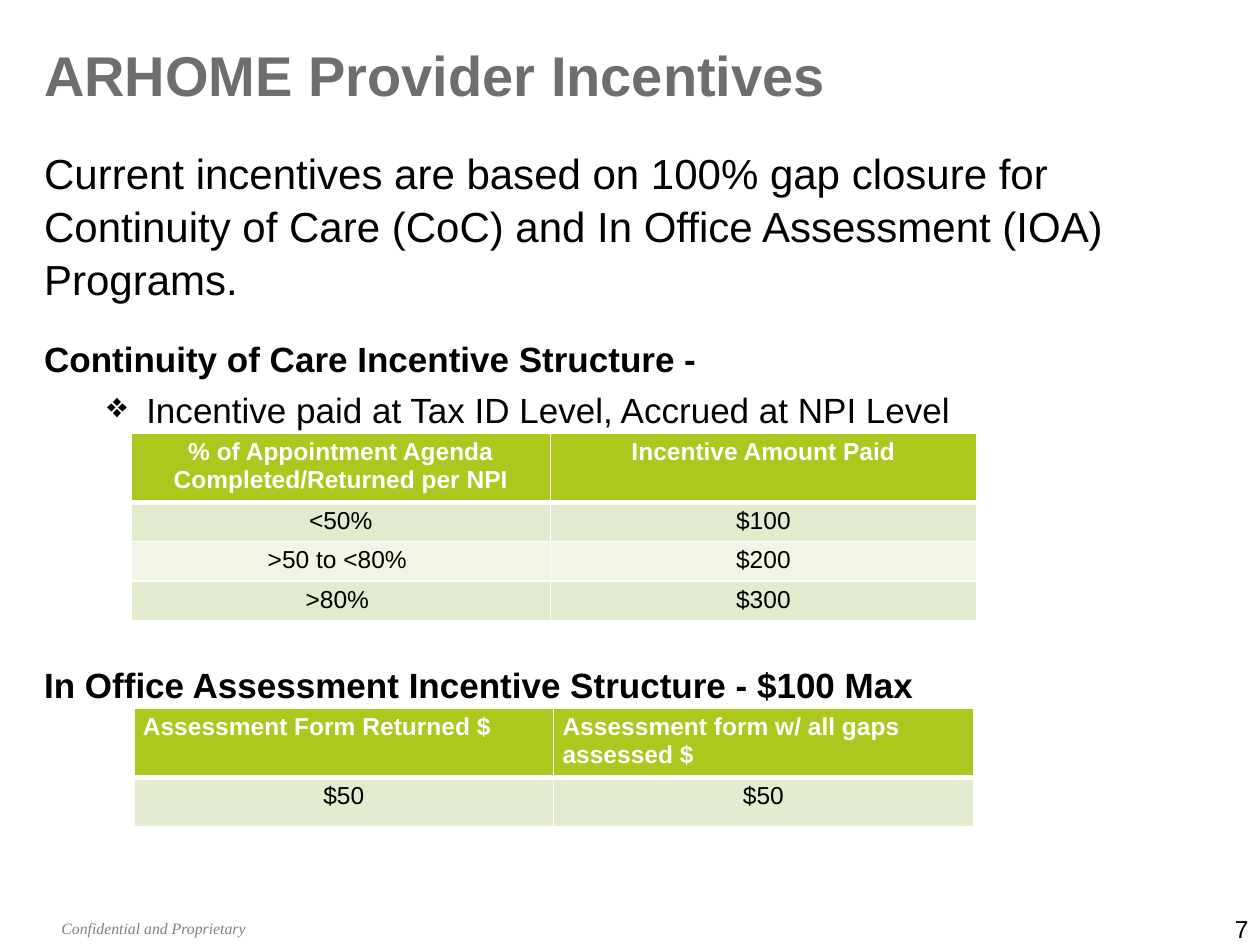
import pptx
import pptx.util
import pptx.dml.color
import pptx.enum.text
import pptx.oxml
import pptx.oxml.ns

Cm, Pt = pptx.util.Cm, pptx.util.Pt
ALIGN = pptx.enum.text.PP_ALIGN
ANCHOR = pptx.enum.text.MSO_ANCHOR

# Content
TITLE = "ARHOME Provider Incentives"
# text, size, bold, space before, bullet
BODY = [
    ("Current incentives are based on 100% gap closure for Continuity of Care "
     "(CoC) and In Office Assessment (IOA) Programs.", 24, False, 0, None),
    ("Continuity of Care Incentive Structure -", 20, True, 18, None),
    ("Incentive paid at Tax ID Level, Accrued at NPI Level", 20, False, 4, "❖"),
    ("In Office Assessment Incentive Structure - $100 Max", 20, True, 132, None),
]
CARE = {
    "at": (2.64, 8.74), "cols": (8.46, 8.58), "rows": (1.35, 0.76, 0.76, 0.76),
    "head": ALIGN.CENTER,
    "cells": [
        ("% of Appointment Agenda Completed/Returned per NPI",
         "Incentive Amount Paid"),
        ("<50%", "$100"),
        (">50 to <80% ", "$200"),
        (">80% ", "$300"),
    ],
}
OFFICE = {
    "at": (2.7, 14.28), "cols": (8.46, 8.46), "rows": (1.35, 0.99),
    "head": ALIGN.LEFT,
    "cells": [
        ("Assessment Form Returned $", "Assessment form w/ all gaps assessed $"),
        ("$50", "$50"),
    ],
}
FOOTER, PAGE = "Confidential and Proprietary", "7"

COLOR = {"title": "6E6E6E", "text": "000000", "foot": "808080",
         "white": "FFFFFF", "head": "AAC81E", "odd": "E2EBCD", "even": "F1F5E8"}

deck = pptx.Presentation()
deck.slide_width, deck.slide_height = Cm(25.4), Cm(19.05)
slide = deck.slides.add_slide(deck.slide_layouts[6])


def rgb(name):
    return pptx.dml.color.RGBColor.from_string(COLOR[name])


def add_run(para, text, size, color, bold=False, italic=False, face="Arial"):
    run = para.add_run()
    run.text = text
    font = run.font
    font.name, font.size, font.bold, font.italic = face, Pt(size), bold, italic
    font.color.rgb = rgb(color)


def add_box(left, top, width, height, anchor=ANCHOR.MIDDLE, inset=True):
    frame = slide.shapes.add_textbox(
        Cm(left), Cm(top), Cm(width), Cm(height)).text_frame
    frame.word_wrap = True
    frame.vertical_anchor = anchor
    if not inset:
        frame.margin_left = frame.margin_right = 0
        frame.margin_top = frame.margin_bottom = 0
    return frame


def add_bullet(para, mark):
    props = para._p.get_or_add_pPr()
    props.set("marL", str(Cm(2.06)))
    props.set("indent", str(-Cm(0.79)))
    node = pptx.oxml.ns.nsdecls("a")
    props.append(pptx.oxml.parse_xml(f'<a:buChar {node} char="{mark}"/>'))


def add_edges(cell, row):
    props = cell._tc.get_or_add_tcPr()
    thick = {0: "B", 1: "T"}.get(row)  # heavy rule under the header
    for spot, side in enumerate("LRTB"):
        width = Pt(3 if side == thick else 1)
        props.insert(spot, pptx.oxml.parse_xml(
            f'<a:ln{side} {pptx.oxml.ns.nsdecls("a")} w="{width}"><a:solidFill>'
            f'<a:srgbClr val="{COLOR["white"]}"/></a:solidFill></a:ln{side}>'))


def add_grid(data):
    cols, rows = data["cols"], data["rows"]
    left, top = data["at"]
    grid = slide.shapes.add_table(len(rows), len(cols), Cm(left), Cm(top),
                                  Cm(sum(cols)), Cm(sum(rows))).table
    for col, width in zip(grid.columns, cols):
        col.width = Cm(width)
    for r, texts in enumerate(data["cells"]):
        grid.rows[r].height = Cm(rows[r])
        head = r == 0
        for c, text in enumerate(texts):
            cell = grid.cell(r, c)
            cell.margin_left = cell.margin_right = Cm(0.18)
            cell.margin_top = cell.margin_bottom = Cm(0.1)
            cell.fill.solid()
            cell.fill.fore_color.rgb = rgb(
                "head" if head else "odd" if r % 2 else "even")
            add_edges(cell, r)
            para = cell.text_frame.paragraphs[0]
            para.alignment = data["head"] if head else ALIGN.CENTER
            add_run(para, text, 14, "white" if head else "text", head)


# Body text
frame = add_box(0.64, 2.8, 23.5, 12.7, ANCHOR.TOP)
for n, (text, size, bold, gap, mark) in enumerate(BODY):
    para = frame.add_paragraph() if n else frame.paragraphs[0]
    para.line_spacing = 1.05
    if gap:
        para.space_before = Pt(gap)
    if mark:
        add_bullet(para, mark)
    add_run(para, text, size, "text", bold)

# Title
frame = add_box(0.64, 0.64, 19.05, 1.7)
add_run(frame.paragraphs[0], TITLE, 32, "title", True)

# Tables
for data in (CARE, OFFICE):
    add_grid(data)

# Footer and page number
frame = add_box(1.24, 18.47, 9.04, 0.5, inset=False)
add_run(frame.paragraphs[0], FOOTER, 9, "foot", italic=True,
        face="Times New Roman")
frame = add_box(19.25, 18.39, 5.92, 0.66, inset=False)
frame.paragraphs[0].alignment = ALIGN.RIGHT
add_run(frame.paragraphs[0], PAGE, 14, "text")

deck.save("out.pptx")
